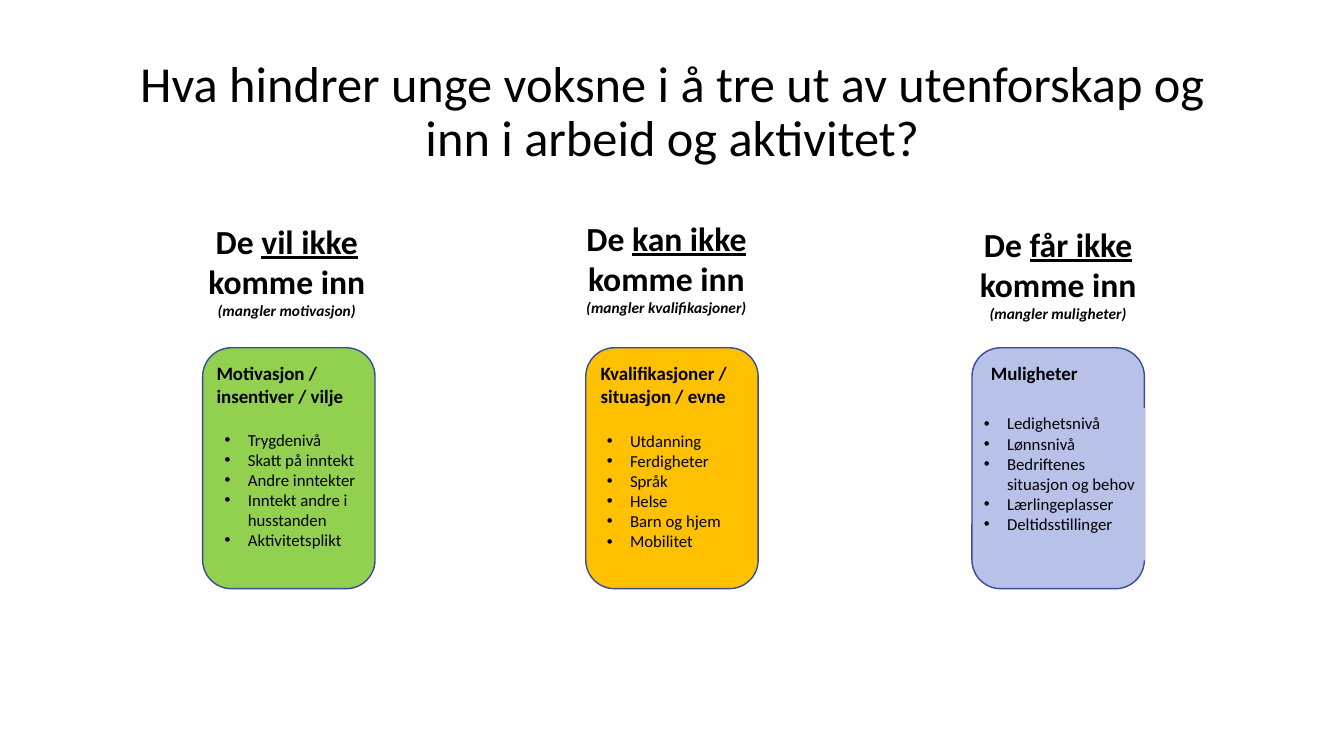
from lxml.etree import SubElement
from pptx import Presentation
from pptx.dml.color import RGBColor
from pptx.enum.shapes import MSO_SHAPE as Shape
from pptx.enum.text import MSO_ANCHOR as Anchor, PP_ALIGN as Align
from pptx.oxml.ns import qn
from pptx.util import Inches, Pt

FONT = "Calibri"
BLACK = RGBColor(0x00, 0x00, 0x00)
OUTLINE = RGBColor(0x3A, 0x4C, 0x94)
GREEN = RGBColor(0x92, 0xD0, 0x50)
AMBER = RGBColor(0xFF, 0xC0, 0x00)
LAVENDER = RGBColor(0xB8, 0xC2, 0xE9)

CARD_TOP, CARD_WIDTH, CARD_HEIGHT = 3.45, 1.71, 2.39
BULLET_INDENT = Inches(0.23)

# Label and list boxes are (left, top, width, height) from the card's corner;
# the heading box is measured from the card's left and the slide's top.
BARRIERS = [
    {"left": 2.01, "color": GREEN, "verb": "vil ikke", "lack": "(mangler motivasjon)",
     "heading_box": (-0.05, 2.14, 1.77, 1.09),
     "label": "Motivasjon / insentiver / vilje", "label_box": (0.04, 0.09, 1.66, 0.56),
     "causes": ["Trygdenivå", "Skatt på inntekt", "Andre inntekter",
                "Inntekt andre i husstanden", "Aktivitetsplikt"],
     "list_box": (0.12, 0.76, 1.59, 1.51), "filled": False},
    {"left": 5.81, "color": AMBER, "verb": "kan ikke", "lack": "(mangler kvalifikasjoner)",
     "heading_box": (-0.1, 2.11, 1.8, 1.09),
     "label": "Kvalifikasjoner / situasjon / evne", "label_box": (0.05, 0.09, 1.66, 0.56),
     "causes": ["Utdanning", "Ferdigheter", "Språk", "Helse", "Barn og hjem", "Mobilitet"],
     "list_box": (0.11, 0.77, 1.35, 1.31), "filled": False},
    {"left": 9.64, "color": LAVENDER, "verb": "får ikke", "lack": "(mangler muligheter)",
     "heading_box": (-0.03, 2.17, 1.77, 1.09),
     "label": "Muligheter", "label_box": (0.09, 0.09, 1.5, 0.33),
     "causes": ["Ledighetsnivå", "Lønnsnivå", "Bedriftenes situasjon og behov",
                "Lærlingeplasser", "Deltidsstillinger"],
     "list_box": (0.02, 0.6, 1.7, 1.51), "filled": True},
]


def add_run(paragraph, text, size, **styles):
    run = paragraph.add_run()
    run.text = text
    run.font.color.rgb = BLACK
    for name, value in {"name": FONT, "size": Pt(size), **styles}.items():
        setattr(run.font, name, value)


def add_paragraphs(frame, count):
    """Return count paragraphs, the first being the one already in the frame."""
    return [frame.paragraphs[0]] + [frame.add_paragraph() for _ in range(count - 1)]


def add_text_box(shapes, left, top, box, wrap=True, fill=None):
    x, y, width, height = box
    shape = shapes.add_textbox(Inches(left + x), Inches(top + y), Inches(width), Inches(height))
    shape.text_frame.word_wrap = wrap
    if fill is not None:
        shape.fill.solid()
        shape.fill.fore_color.rgb = fill
    return shape.text_frame


def add_bullet(paragraph):
    properties = paragraph._p.get_or_add_pPr()
    properties.set("marL", str(BULLET_INDENT))
    properties.set("indent", str(-BULLET_INDENT))
    SubElement(properties, qn("a:buFont")).set("typeface", "Arial")
    SubElement(properties, qn("a:buChar")).set("char", "•")


def add_title(slide, text):
    title = slide.shapes.title
    title.left, title.top, title.width, title.height = map(Inches, (0.92, 0.4, 11.5, 1.45))
    frame = title.text_frame
    frame.word_wrap = True
    frame.vertical_anchor = Anchor.MIDDLE
    paragraph = frame.paragraphs[0]
    paragraph.alignment = Align.CENTER
    paragraph.line_spacing = 0.9
    add_run(paragraph, text, 36)


def add_heading(slide, barrier):
    frame = add_text_box(slide.shapes, barrier["left"], 0, barrier["heading_box"], wrap=False)
    claim, ending, lack = paragraphs = add_paragraphs(frame, 3)
    for paragraph in paragraphs:
        paragraph.alignment = Align.CENTER
    add_run(claim, "De ", 24, bold=True)
    add_run(claim, barrier["verb"], 24, bold=True, underline=True)
    add_run(ending, "komme inn", 24, bold=True)
    add_run(lack, barrier["lack"], 11, bold=True, italic=True)


def add_card(slide, barrier):
    shapes = slide.shapes.add_group_shape().shapes
    left = barrier["left"]
    card = shapes.add_shape(Shape.ROUNDED_RECTANGLE, Inches(left), Inches(CARD_TOP),
                            Inches(CARD_WIDTH), Inches(CARD_HEIGHT))
    card.shadow.inherit = False
    card.fill.solid()
    card.fill.fore_color.rgb = barrier["color"]
    card.line.color.rgb = OUTLINE
    card.line.width = Pt(1)

    fill = barrier["color"] if barrier["filled"] else None
    label = add_text_box(shapes, left, CARD_TOP, barrier["label_box"], fill=fill)
    add_run(label.paragraphs[0], barrier["label"], 13.5, bold=True)

    causes = barrier["causes"]
    frame = add_text_box(shapes, left, CARD_TOP, barrier["list_box"], fill=fill)
    for paragraph, cause in zip(add_paragraphs(frame, len(causes)), causes):
        add_bullet(paragraph)
        add_run(paragraph, cause, 12)


def main():
    presentation = Presentation()
    presentation.slide_width, presentation.slide_height = Inches(13.33), Inches(7.5)
    slide = presentation.slides.add_slide(presentation.slide_layouts[5])
    add_title(slide, "Hva hindrer unge voksne i å tre ut av utenforskap og inn i arbeid og aktivitet?")
    for barrier in BARRIERS:
        add_card(slide, barrier)
        add_heading(slide, barrier)
    presentation.save("out.pptx")


if __name__ == "__main__":
    main()
